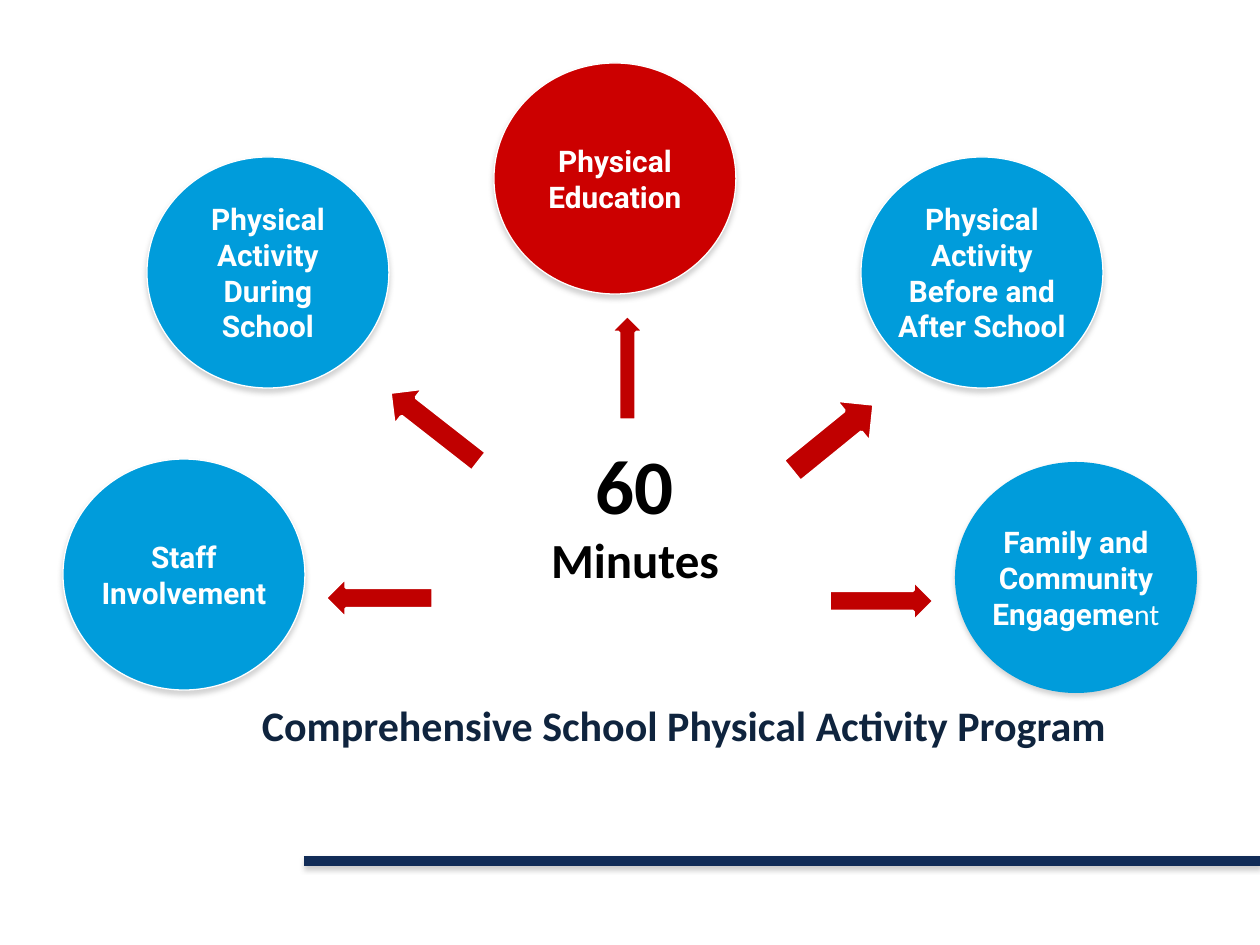
"""Build a slide showing the five parts of a school physical activity program."""
from lxml.etree import SubElement
from pptx import Presentation
from pptx.dml.color import RGBColor
from pptx.enum.shapes import MSO_CONNECTOR, MSO_SHAPE
from pptx.enum.text import MSO_ANCHOR, PP_ALIGN
from pptx.oxml.ns import qn
from pptx.util import Emu, Pt

EMU_PER_PX = 914400 / 126
BLUE = RGBColor(0x00, 0x9C, 0xDB)
RED = RGBColor(0xCC, 0x00, 0x00)
ARROW_RED = RGBColor(0xC0, 0x00, 0x00)
NAVY = RGBColor(0x11, 0x2C, 0x57)
TITLE_NAVY = RGBColor(0x0F, 0x24, 0x3E)
GREY = RGBColor(0x80, 0x80, 0x80)
WHITE = RGBColor(0xFF, 0xFF, 0xFF)
BLACK = RGBColor(0x00, 0x00, 0x00)

CIRCLE_SIZE = (242, 231)
CIRCLES = [
    (0, 396, BLUE, True, "Staff Involvement", ""),
    (84, 94, BLUE, True, "Physical Activity During School", ""),
    (431, 0, RED, True, "Physical Education", ""),
    (798, 94, BLUE, True, "Physical Activity Before and After School", ""),
    (892, 399, BLUE, False, "Family and Community Engageme", "nt"),
]
ARROWS = [
    (MSO_SHAPE.UP_ARROW, 547, 252, 35, 105, 0),
    (MSO_SHAPE.RIGHT_ARROW, 717, 347, 106, 55, 320.9),
    (MSO_SHAPE.RIGHT_ARROW, 766, 517, 105, 42, 0),
    (MSO_SHAPE.RIGHT_ARROW, 315, 340, 113, 48, 218),
    (MSO_SHAPE.RIGHT_ARROW, 262, 514, 108, 42, 180),
]


def px(*lengths):
    """Turn pixel lengths into EMU."""
    return [Emu(round(length * EMU_PER_PX)) for length in lengths]


def add_shadow(shape, opacity, distance):
    """Give a shape a soft grey shadow that falls straight down."""
    properties = shape._element.spPr
    effects = properties.find(qn("a:effectLst"))
    if effects is None:
        effects = SubElement(properties, qn("a:effectLst"))
    shadow = SubElement(effects, qn("a:outerShdw"), blurRad=str(Pt(3.1)),
                        dist=str(Pt(distance)), dir="5400000", rotWithShape="0")
    color = SubElement(shadow, qn("a:srgbClr"), val=str(GREY))
    SubElement(color, qn("a:alpha"), val=str(opacity * 1000))


def format_font(font, name, size, color, bold=True):
    """Set the face, size, colour and weight of a font."""
    font.name = name
    font.size = Pt(size)
    font.color.rgb = color
    font.bold = bold


def add_label(slide, box, text, sizes, color):
    """Place centred bold text with one size for each paragraph."""
    text_frame = slide.shapes.add_textbox(*px(*box)).text_frame
    text_frame.word_wrap = True
    text_frame.text = text
    for paragraph, size in zip(text_frame.paragraphs, sizes):
        paragraph.alignment = PP_ALIGN.CENTER
        format_font(paragraph.runs[0].font, "Calibri", size, color)


def add_circle(slide, box, fill, outlined, text, light_ending):
    """Place a component circle with its name."""
    shape = slide.shapes.add_shape(MSO_SHAPE.OVAL, *px(*box))
    shape.fill.solid()
    shape.fill.fore_color.rgb = fill
    if outlined:
        shape.line.color.rgb = WHITE
        shape.line.width = Pt(0.75)
    else:
        shape.line.fill.background()
    shape.shadow.inherit = False
    add_shadow(shape, 35, 1.8)
    text_frame = shape.text_frame
    text_frame.word_wrap = True
    text_frame.vertical_anchor = MSO_ANCHOR.MIDDLE
    text_frame.margin_left = text_frame.margin_right = 0
    text_frame.margin_top = text_frame.margin_bottom = 0
    text_frame.text = text
    paragraph = text_frame.paragraphs[0]
    paragraph.alignment = PP_ALIGN.CENTER
    format_font(paragraph.runs[0].font, "Roboto", 17, WHITE)
    if light_ending:
        run = paragraph.add_run()
        run.text = light_ending
        format_font(run.font, "Calibri", 17, WHITE, bold=False)


def add_arrow(slide, kind, box, rotation):
    """Place a red block arrow with a white outline."""
    shape = slide.shapes.add_shape(kind, *px(*box))
    shape.rotation = rotation
    shape.fill.solid()
    shape.fill.fore_color.rgb = ARROW_RED
    shape.line.color.rgb = WHITE
    shape.line.width = Pt(2)
    shape.shadow.inherit = False


def add_diagram(slide, left, top):
    """Place the circles, the central goal and the arrows between them."""
    for x, y, fill, outlined, text, light_ending in CIRCLES:
        add_circle(slide, (left + x, top + y, *CIRCLE_SIZE), fill, outlined, text, light_ending)
    add_label(slide, (left + 388, top + 368, 368, 165), "60\nMinutes", (44, 28), BLACK)
    for kind, x, y, width, height, rotation in ARROWS:
        add_arrow(slide, kind, (left + x, top + y, width, height), rotation)


def add_footer_rule(slide, left, top, width):
    """Place the thick navy rule at the foot of the slide."""
    rule = slide.shapes.add_connector(MSO_CONNECTOR.STRAIGHT, *px(left, top, left + width, top))
    rule.line.color.rgb = NAVY
    rule.line.width = Pt(6)
    add_shadow(rule, 38, 1.6)


def main():
    """Build and save the presentation."""
    presentation = Presentation()
    presentation.slide_width, presentation.slide_height = px(1260, 945)
    slide = presentation.slides.add_slide(presentation.slide_layouts[6])
    add_footer_rule(slide, 304, 861, 956)
    add_label(slide, (199, 693, 970, 64), "Comprehensive School Physical Activity Program",
              (24,), TITLE_NAVY)
    add_diagram(slide, 63, 63)
    presentation.save("out.pptx")


if __name__ == "__main__":
    main()
